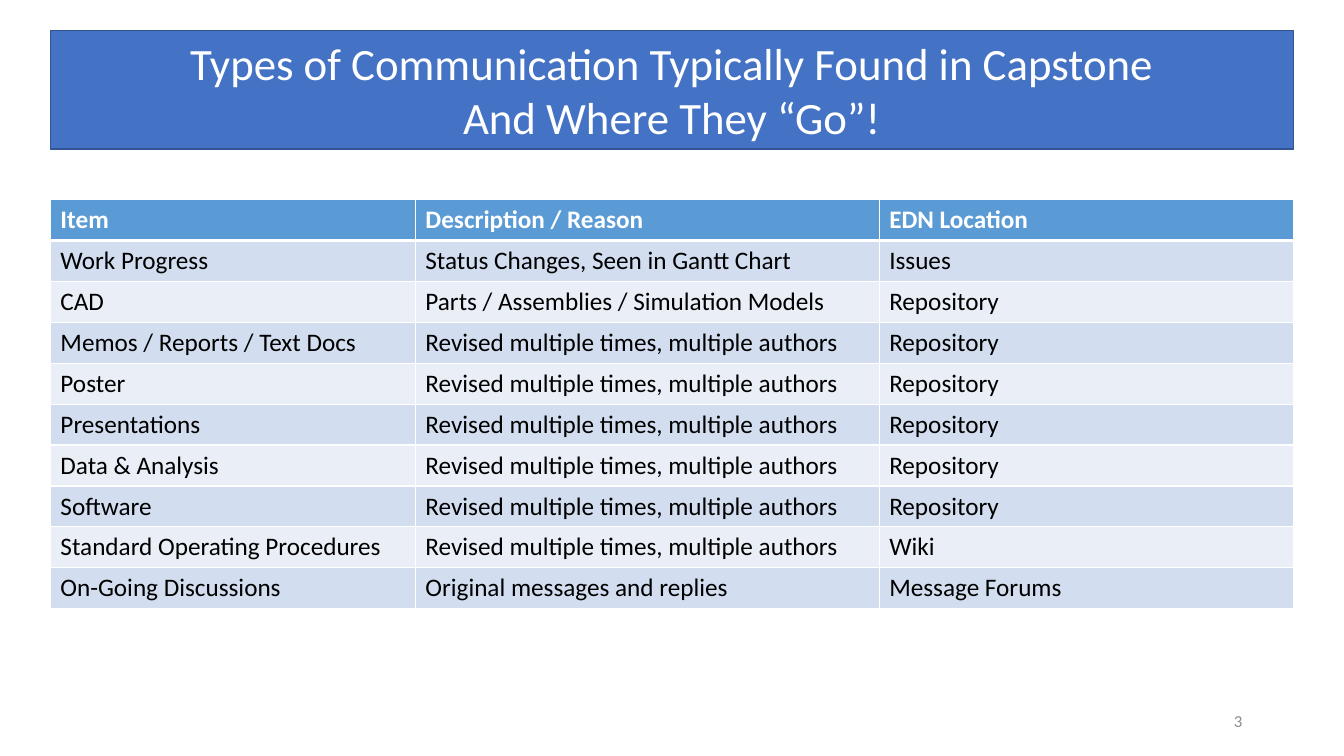
"""Build a slide that shows where each type of capstone communication goes."""
from lxml import etree
from pptx import Presentation
from pptx.dml.color import RGBColor
from pptx.enum.shapes import MSO_SHAPE
from pptx.enum.text import MSO_ANCHOR, MSO_AUTO_SIZE, PP_ALIGN
from pptx.oxml.ns import qn
from pptx.util import Inches, Pt

RECTANGLE = MSO_SHAPE.RECTANGLE
MIDDLE = MSO_ANCHOR.MIDDLE
GROW = MSO_AUTO_SIZE.SHAPE_TO_FIT_TEXT
LEFT, CENTER, RIGHT = PP_ALIGN.LEFT, PP_ALIGN.CENTER, PP_ALIGN.RIGHT

TITLE = ["Types of Communication Typically Found in Capstone", "And Where They “Go”!"]
PAGE_NUMBER = "3"
REVISED = "Revised multiple times, multiple authors"
HEADINGS = ("Item", "Description / Reason", "EDN Location")
COMMUNICATIONS = [
    ("Work Progress", "Status Changes, Seen in Gantt Chart", "Issues"),
    ("CAD", "Parts / Assemblies / Simulation Models", "Repository"),
    ("Memos / Reports / Text Docs", REVISED, "Repository"),
    ("Poster", REVISED, "Repository"),
    ("Presentations", REVISED, "Repository"),
    ("Data & Analysis", REVISED, "Repository"),
    ("Software", REVISED, "Repository"),
    ("Standard Operating Procedures", REVISED, "Wiki"),
    ("On-Going Discussions", "Original messages and replies", "Message Forums"),
]

THEME = {
    "font": "Calibri",
    "banner": "4472C4",
    "banner_line": "325491",
    "header": "5B9BD5",
    "bands": ("D2DEEF", "EAEFF7"),
    "border": "FFFFFF",
    "title": {"size": 32, "color": "FFFFFF"},
    "heading": {"size": 18, "color": "FFFFFF", "bold": True},
    "body": {"size": 18, "color": "000000", "bold": False},
    "page": {"size": 12, "color": "8C8C8C"},
}
MARGIN = 0.5
CONTENT_WIDTH = 12.33
BANNER_TOP, BANNER_HEIGHT = 0.3, 1.18
TABLE_TOP, ROW_HEIGHT = 1.98, 0.406
COLUMN_WIDTHS = (3.62, 4.6, 4.11)
THIN, THICK = 1, 3


def write(frame, lines, style, align=LEFT):
    """Fill a text frame with one paragraph per line."""
    frame.text = "\n".join(lines)
    formats = {"name": THEME["font"], "size": Pt(style["size"]), "bold": style.get("bold")}
    for paragraph in frame.paragraphs:
        paragraph.alignment = align
        font = paragraph.runs[0].font
        for attribute, value in formats.items():
            setattr(font, attribute, value)
        font.color.rgb = RGBColor.from_string(style["color"])


def paint(fill, color):
    """Give a fill one solid colour."""
    fill.solid()
    fill.fore_color.rgb = RGBColor.from_string(color)


def add_borders(cell, top, bottom):
    """Draw the four borders of a cell, with widths in points."""
    properties = cell._tc.get_or_add_tcPr()
    for side, width in {"L": THIN, "R": THIN, "T": top, "B": bottom}.items():
        border = etree.SubElement(properties, qn(f"a:ln{side}"), w=str(Pt(width)))
        solid = etree.SubElement(border, qn("a:solidFill"))
        etree.SubElement(solid, qn("a:srgbClr"), val=THEME["border"])


def add_banner(slide):
    """Add the title banner."""
    banner = slide.shapes.add_shape(
        RECTANGLE, Inches(MARGIN), Inches(BANNER_TOP), Inches(CONTENT_WIDTH), Inches(BANNER_HEIGHT))
    banner.shadow.inherit = False
    paint(banner.fill, THEME["banner"])
    paint(banner.line.fill, THEME["banner_line"])
    banner.line.width = Pt(1)
    write(banner.text_frame, TITLE, THEME["title"], CENTER)
    banner.text_frame.auto_size = GROW


def add_locations(slide):
    """Add the table of communications and their locations."""
    rows = [HEADINGS, *COMMUNICATIONS]
    locations = slide.shapes.add_table(
        len(rows), len(HEADINGS), Inches(MARGIN), Inches(TABLE_TOP),
        Inches(CONTENT_WIDTH), Inches(ROW_HEIGHT * len(rows))).table
    for column, width in zip(locations.columns, COLUMN_WIDTHS):
        column.width = Inches(width)
    for r, row in enumerate(rows):
        locations.rows[r].height = Inches(ROW_HEIGHT)
        color = THEME["bands"][(r - 1) % 2] if r else THEME["header"]
        style = THEME["body" if r else "heading"]
        for c, entry in enumerate(row):
            cell = locations.cell(r, c)
            write(cell.text_frame, [entry], style)
            add_borders(cell, THICK if r == 1 else THIN, THICK if r == 0 else THIN)
            paint(cell.fill, color)


def add_page_number(slide):
    """Add the page number at the lower right."""
    page = slide.shapes.add_textbox(Inches(9.42), Inches(6.95), Inches(3), Inches(0.4)).text_frame
    page.word_wrap = True
    page.vertical_anchor = MIDDLE
    write(page, [PAGE_NUMBER], THEME["page"], RIGHT)


def main():
    """Build and save the slide."""
    deck = Presentation()
    deck.slide_width, deck.slide_height = Inches(13.33), Inches(7.5)
    slide = deck.slides.add_slide(deck.slide_layouts[6])
    add_page_number(slide)
    add_banner(slide)
    add_locations(slide)
    deck.save("out.pptx")


if __name__ == "__main__":
    main()
